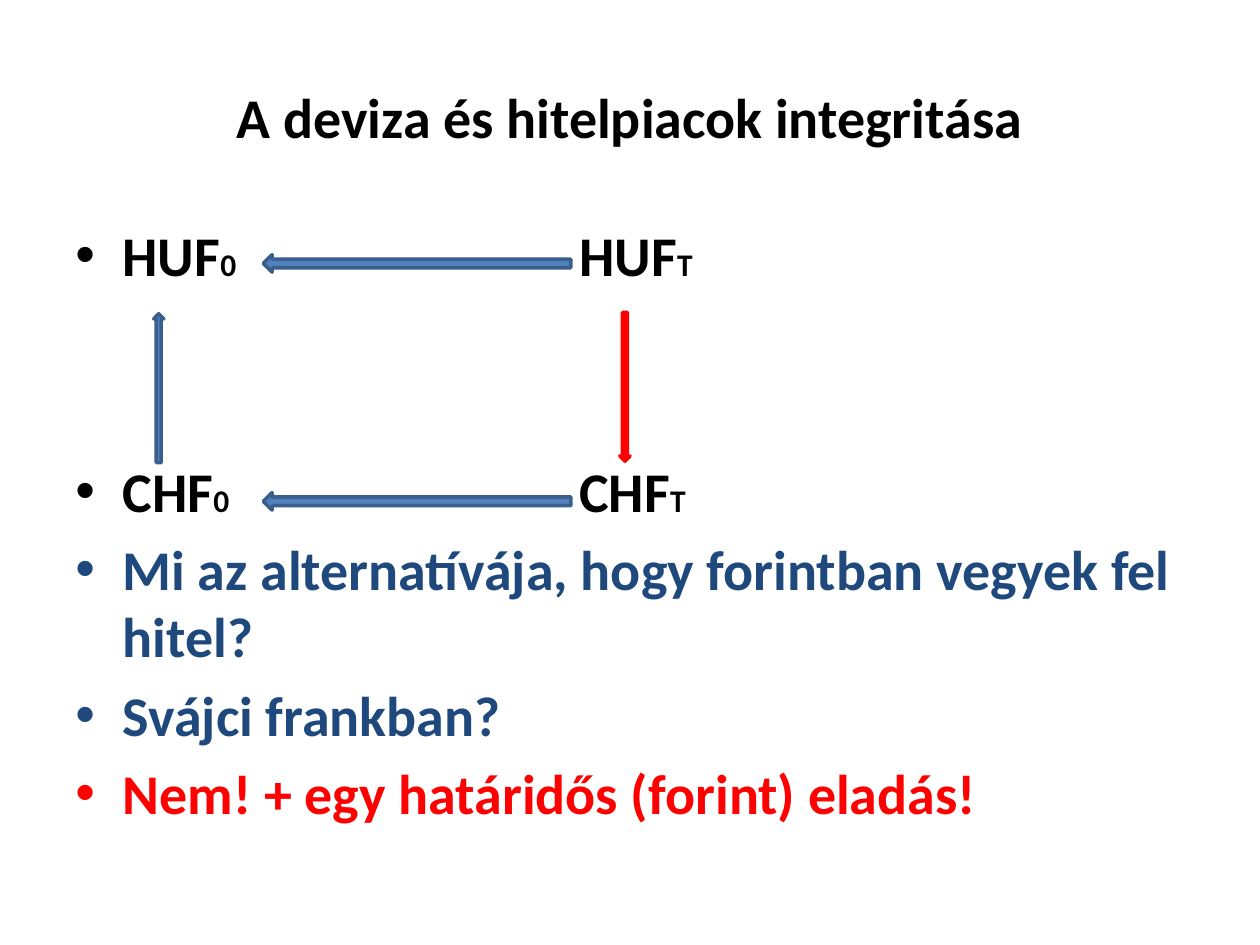
from pptx import Presentation
from pptx.dml.color import RGBColor
from pptx.enum.shapes import MSO_SHAPE as Shape
from pptx.enum.text import MSO_ANCHOR as Anchor, PP_ALIGN as Align
from pptx.oxml import parse_xml
from pptx.oxml.ns import nsdecls
from pptx.util import Pt

BLACK, NAVY, RED = "000000", "1F497D", "FF0000"
BLUE, DARK_BLUE = "4F81BD", "3A5F8C"


def rgb(code):
    return RGBColor.from_string(code)


class Deck:
    font_name = "Calibri"
    text_size = 32
    index_size = 18
    bullet_indent = 27
    column_tab = 288
    line_width = 2

    def __init__(self, width, height):
        self.presentation = Presentation()
        self.presentation.slide_width = Pt(width)
        self.presentation.slide_height = Pt(height)
        self.slide = self.presentation.slides.add_slide(
            self.presentation.slide_layouts[6])

    def text_frame(self, left, top, width, height, anchor):
        box = self.slide.shapes.add_textbox(
            Pt(left), Pt(top), Pt(width), Pt(height))
        box.text_frame.word_wrap = True
        box.text_frame.vertical_anchor = anchor
        return box.text_frame

    def style(self, paragraph, color):
        font = paragraph.font
        font.name, font.size, font.bold = self.font_name, Pt(self.text_size), True
        font.color.rgb = rgb(color)

    def title(self, text, *bounds):
        paragraph = self.text_frame(*bounds, Anchor.MIDDLE).paragraphs[0]
        paragraph.text = text
        paragraph.alignment = Align.CENTER
        self.style(paragraph, BLACK)

    def add_bullet(self, paragraph):
        """Set the hanging indent, the bullet and the tab of the right column."""
        properties = paragraph._p.get_or_add_pPr()
        properties.set("marL", str(Pt(self.bullet_indent)))
        properties.set("indent", str(-Pt(self.bullet_indent)))
        namespace = nsdecls("a")
        for element in (
            f'<a:buFont {namespace} typeface="Arial"/>',
            f'<a:buChar {namespace} char="•"/>',
            f'<a:tabLst {namespace}>'
            f'<a:tab pos="{Pt(self.column_tab)}" algn="l"/></a:tabLst>',
        ):
            properties.append(parse_xml(element))

    def bullets(self, items, *bounds):
        """Items are (parts, colour, space before); every second part is an index."""
        frame = self.text_frame(*bounds, Anchor.TOP)
        for number, (parts, color, space) in enumerate(items):
            paragraph = frame.add_paragraph() if number else frame.paragraphs[0]
            self.add_bullet(paragraph)
            paragraph.space_before = Pt(space)
            self.style(paragraph, color)
            for position, part in enumerate(parts):
                run = paragraph.add_run()
                run.text = part
                if position % 2:
                    run.font.size = Pt(self.index_size)
                    run.font.bold = True

    def arrow(self, center_x, center_y, length, thickness, rotation, fill, line):
        arrow = self.slide.shapes.add_shape(
            Shape.RIGHT_ARROW, Pt(center_x - length / 2),
            Pt(center_y - thickness / 2), Pt(length), Pt(thickness))
        arrow.rotation = rotation
        arrow.shadow.inherit = False
        arrow.fill.solid()
        arrow.fill.fore_color.rgb = rgb(fill)
        arrow.line.color.rgb = rgb(line)
        arrow.line.width = Pt(self.line_width)


def main():
    deck = Deck(720, 540)
    deck.title("A deviza és hitelpiacok integritása", 36, 21.6, 648, 90)
    deck.bullets([
        (["HUF", "0", "\tHUF", "T"], BLACK, 0),
        (["CHF", "0", "\tCHF", "T"], BLACK, 96.4),
        (["Mi az alternatívája, hogy forintban vegyek fel hitel?"], NAVY, 6.4),
        (["Svájci frankban?"], NAVY, 6.4),
        (["Nem! + egy határidős (forint) eladás!"], RED, 6.4),
    ], 36, 122.4, 648, 356.4)

    for discounting_y in (150.5, 286.5):
        deck.arrow(238.3, discounting_y, 175.7, 10, 180, BLUE, DARK_BLUE)
    deck.arrow(90.7, 221.8, 85, 5.8, 270, BLUE, DARK_BLUE)
    deck.arrow(357.1, 221, 85, 5.8, 90, RED, RED)

    deck.presentation.save("out.pptx")


if __name__ == "__main__":
    main()
